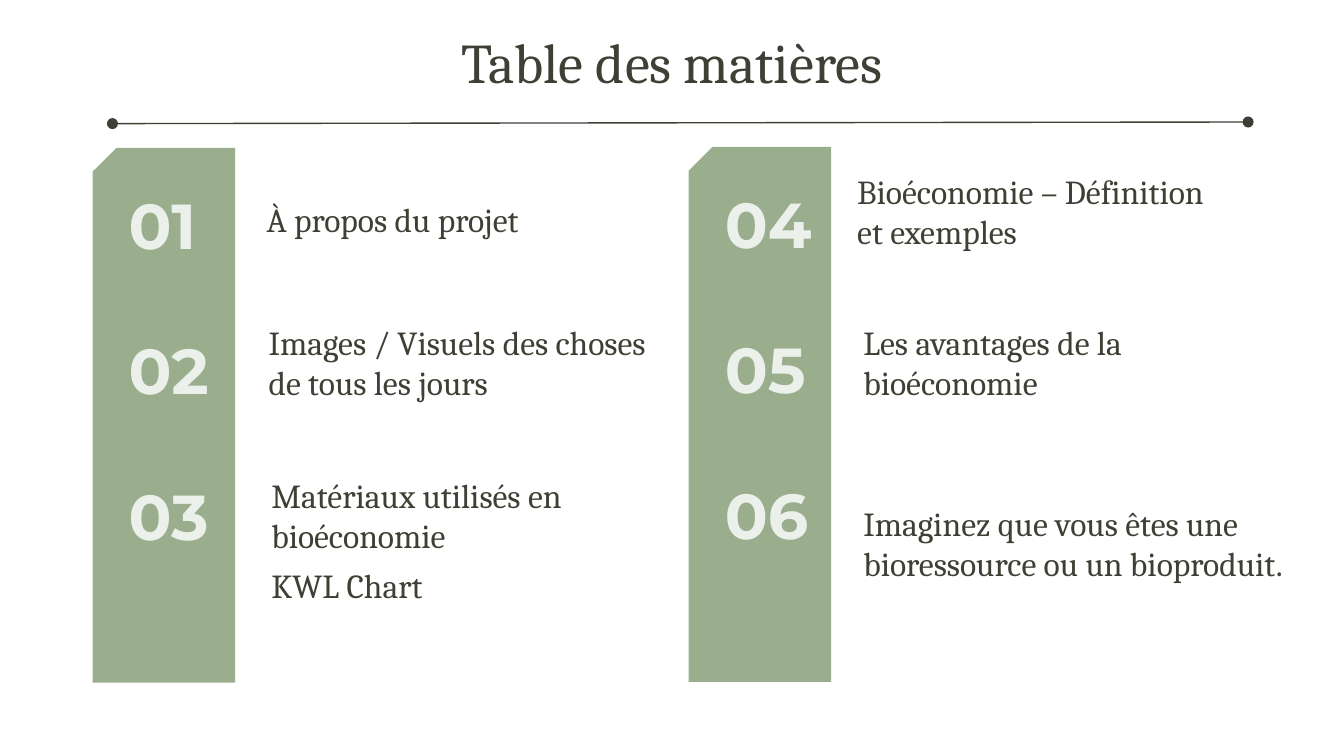
import pptx
import pptx.util
import pptx.dml.color
import pptx.enum.shapes
import pptx.enum.text
import pptx.oxml
import pptx.oxml.ns

COLORS = {"ink": "3E4035", "sage": "9AAE8E", "pale": "ECF0EA"}
COLS, ROWS = 100, 56.25  # square grid cells of a tenth of an inch

ALIGN = pptx.enum.text.PP_ALIGN
ANCHOR = pptx.enum.text.MSO_ANCHOR


class Deck:
    serif, sans = "Cambria", "Montserrat"

    def __init__(self):
        self.prs = pptx.Presentation()
        self.prs.slide_width = pptx.util.Inches(10)
        self.prs.slide_height = self.prs.slide_width * 9 // 16
        self.slide = self.prs.slides.add_slide(self.prs.slide_layouts[6])

    def grid(self, *lengths):
        """Turn alternating column and row counts into slide lengths."""
        steps = (self.prs.slide_width / COLS, self.prs.slide_height / ROWS)
        return [round(n * steps[i % 2]) for i, n in enumerate(lengths)]

    def color(self, name):
        return pptx.dml.color.RGBColor.from_string(COLORS[name])

    def text(self, box, words, size=18, font=serif, color="ink", bold=False,
             align=ALIGN.LEFT, anchor=ANCHOR.BOTTOM):
        tf = self.slide.shapes.add_textbox(*self.grid(*box)).text_frame
        tf.word_wrap = True
        tf.vertical_anchor = anchor
        tf.margin_left, tf.margin_top = self.grid(1, 1)
        tf.margin_right, tf.margin_bottom = self.grid(1, 1)
        p = tf.paragraphs[0]
        p.alignment = align
        r = p.add_run()
        r.text = words
        r.font.size = pptx.util.Pt(size)
        r.font.name = font
        r.font.bold = bold
        r.font.color.rgb = self.color(color)

    def band(self, box):
        """Vertical bar with its top left corner cut off."""
        sp = self.slide.shapes.add_shape(
            pptx.enum.shapes.MSO_SHAPE.SNIP_1_RECTANGLE, *self.grid(*box))
        sp.adjustments[0] = 0.167
        sp._element.spPr.find(pptx.oxml.ns.qn("a:xfrm")).set("flipH", "1")
        sp.shadow.inherit = False
        sp.fill.solid()
        sp.fill.fore_color.rgb = self.color("sage")
        sp.line.fill.background()

    def rule(self, ends):
        """Straight line with a dot at each end."""
        line = self.slide.shapes.add_connector(
            pptx.enum.shapes.MSO_CONNECTOR.STRAIGHT, *self.grid(*ends))
        line.line.width = pptx.util.Pt(0.75)
        line.line.color.rgb = self.color("ink")
        ln = line.line._get_or_add_ln()
        for tag in ("a:headEnd", "a:tailEnd"):
            end = pptx.oxml.ns.qn(tag)
            ln.append(ln.makeelement(end, {"type": "oval"}))
        sp_pr = line._element.spPr
        sp_pr.append(sp_pr.makeelement(pptx.oxml.ns.qn("a:effectLst"), {}))


# Each column: left and top of its band, then (left, top, width, words) per entry
COLUMNS = [
    (6.9, 11, [
        (18.85, 12.4, 30.1, "À propos du projet"),
        (19, 24.55, 30.1, "Images / Visuels des choses de tous les jours"),
        (19.2, 35.9, 30.1, "Matériaux utilisés en bioéconomie"),
    ]),
    (51.25, 10.93, [
        (62.8, 13.3, 30.1, "Bioéconomie – Définition et exemples"),
        (63.25, 24.55, 30.1, "Les avantages de la bioéconomie"),
        (63.25, 38.03, 35, "Imaginez que vous êtes une bioressource ou un bioproduit."),
    ]),
]
NUMBER_PITCH = 10.83


def main():
    deck = Deck()
    deck.text((6, 1.05, 88, 10), "Table des matières", size=30,
              align=ALIGN.CENTER, anchor=ANCHOR.TOP)
    number = 0
    for left, top, entries in COLUMNS:
        deck.band((left, top, 10.6, 39.8))
        for row, (x, y, width, words) in enumerate(entries):
            number += 1
            deck.text((left + 1.7, top + 2.3 + row * NUMBER_PITCH, 9, 7.2),
                      f"{number:02}", size=34, font=deck.sans,
                      color="pale", bold=True)
            deck.text((x, y, width, 6.4), words)
    deck.rule((8.37, 9.2, 92.87, 9.08))
    deck.text((19.2, 41.4, 30.1, 4.6), "KWL Chart")
    deck.prs.save("out.pptx")


if __name__ == "__main__":
    main()
